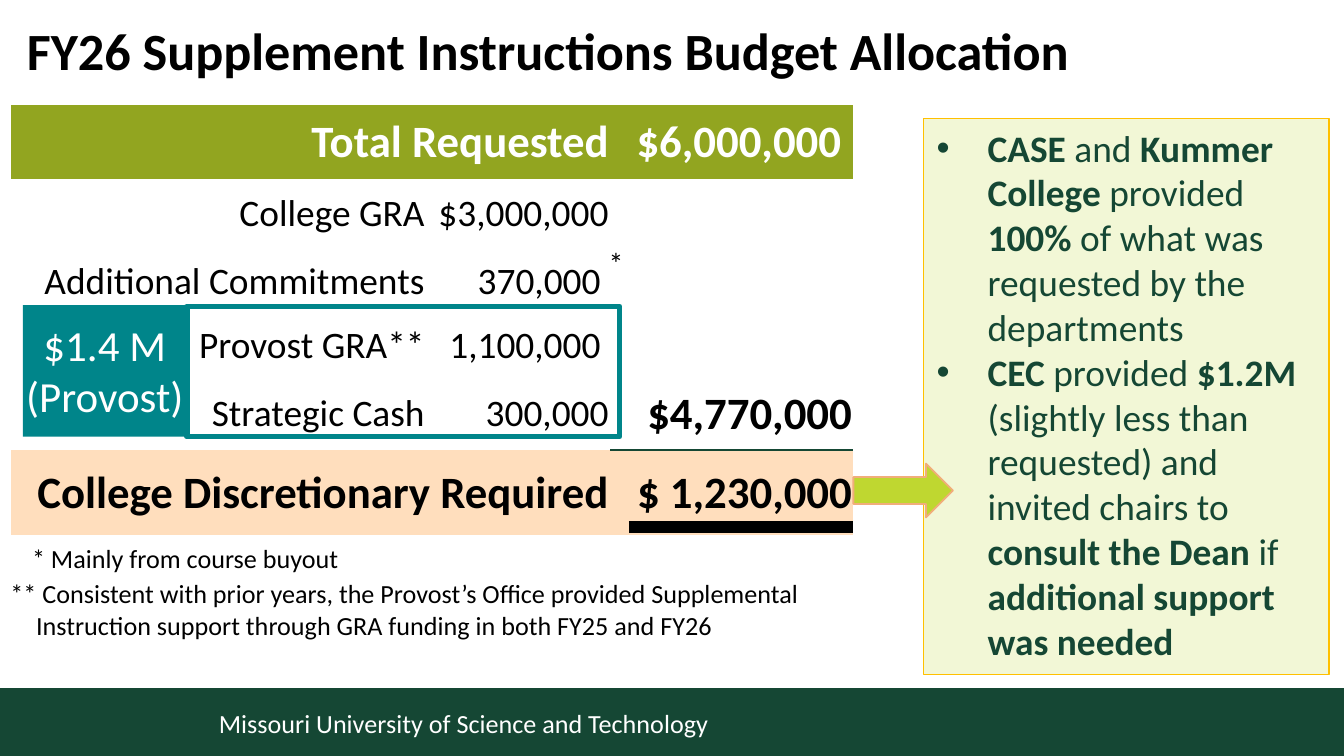
from lxml import etree
from pptx import Presentation
from pptx.dml.color import RGBColor
from pptx.enum.shapes import MSO_CONNECTOR, MSO_SHAPE
from pptx.enum.text import MSO_ANCHOR, PP_ALIGN
from pptx.oxml.ns import qn
from pptx.util import Inches, Pt

LEFT, CENTER, RIGHT = PP_ALIGN.LEFT, PP_ALIGN.CENTER, PP_ALIGN.RIGHT
TOP, MIDDLE = MSO_ANCHOR.TOP, MSO_ANCHOR.MIDDLE
RECT, ARROW = MSO_SHAPE.RECTANGLE, MSO_SHAPE.RIGHT_ARROW

BLACK = RGBColor(0x00, 0x00, 0x00)
WHITE = RGBColor(0xFF, 0xFF, 0xFF)
GREEN = RGBColor(0x15, 0x47, 0x34)
OLIVE = RGBColor(0x92, 0xA5, 0x20)
PEACH = RGBColor(0xFF, 0xDE, 0xBD)
TEAL = RGBColor(0x00, 0x85, 0x8A)
CREAM = RGBColor(0xF2, 0xF7, 0xD6)
GOLD = RGBColor(0xFF, 0xC0, 0x00)
LIME = RGBColor(0xBF, 0xD7, 0x30)
CORAL = RGBColor(0xF1, 0xAD, 0x7A)
NO_GRID = "{2D5ABB26-0587-4C30-8999-92F81FD0307C}"

prs = Presentation()
prs.slide_width, prs.slide_height = Inches(10), Inches(5.625)
U = prs.slide_width // 100
s = prs.slides.add_slide(prs.slide_layouts[6])


def add_box(x, y, w, h, kind=None, fill=None, line=None, weight=1):
    area = [round(v * U) for v in (x, y, w, h)]
    if kind is None:
        sp = s.shapes.add_textbox(*area)
    else:
        sp = s.shapes.add_shape(kind, *area)
        sp.shadow.inherit = False
        if fill is None:
            sp.fill.background()
        else:
            sp.fill.solid()
            sp.fill.fore_color.rgb = fill
        if line is None:
            sp.line.fill.background()
        else:
            sp.line.color.rgb = line
            sp.line.width = Pt(weight)
    sp.text_frame.word_wrap = True
    sp.text_frame.vertical_anchor = TOP
    return sp.text_frame


def write(tf, paras, size, color, align=LEFT):
    for i, runs in enumerate(paras):
        p = tf.add_paragraph() if i else tf.paragraphs[0]
        p.alignment = align
        for text, bold in runs:
            r = p.add_run()
            r.text = text
            r.font.name = "Calibri"
            r.font.size = Pt(size)
            r.font.bold = bold
            r.font.color.rgb = color


add_box(0, 51.2, 100, 5.05, RECT, GREEN)

tf = add_box(2, 1.9, 97.2, 5.2)
tf.margin_left = tf.margin_right = tf.margin_top = tf.margin_bottom = 0
write(tf, [[("FY26 Supplement Instructions Budget Allocation", True)]], 28, BLACK)
tf.paragraphs[0].line_spacing = 0.9

tf = add_box(15.3, 51.8, 63.5, 4)
tf.vertical_anchor = MIDDLE
write(tf, [[("Missouri University of Science and Technology", False)]], 14, WHITE)

cols = [30.9, 13.7, 18.1]
rows = [5.5, 5.1, 5, 4.6, 5.5, 6.3]
gf = s.shapes.add_table(len(rows), len(cols), round(0.8 * U), round(7.8 * U),
                        round(sum(cols) * U), round(sum(rows) * U))
tbl = gf.table
tbl.first_row = tbl.horz_banding = False
tbl._tbl.tblPr.find(qn("a:tableStyleId")).text = NO_GRID
for col, w in zip(tbl.columns, cols):
    col.width = round(w * U)
for row, h in zip(tbl.rows, rows):
    row.height = round(h * U)

budget = [
    ("Total Requested", "", "$6,000,000"),
    ("College GRA", "$3,000,000", ""),
    ("Additional Commitments", "370,000", ""),
    ("Provost GRA**", "1,100,000", ""),
    ("Strategic Cash", "300,000", "$4,770,000"),
    ("College Discretionary Required", "", "$ 1,230,000"),
]
bands = {0: OLIVE, 5: PEACH}
insets = {(0, 2): 0.9, (2, 1): 0.7, (3, 1): 0.7}
rules = {(4, 2): "a:lnB", (5, 2): "a:lnT"}
for i in bands:
    tbl.cell(i, 0).merge(tbl.cell(i, 1))
for i, texts in enumerate(budget):
    for j, text in enumerate(texts):
        cell = tbl.cell(i, j)
        cell.margin_left = cell.margin_top = round(0.1 * U)
        cell.margin_right = round(insets.get((i, j), 0.1) * U)
        cell.margin_bottom = 0
        cell.vertical_anchor = MIDDLE
        if i in bands:
            cell.fill.solid()
            cell.fill.fore_color.rgb = bands[i]
        else:
            cell.fill.background()
        if text:
            strong = i in bands or j == 2
            write(cell.text_frame, [[(text, strong)]], 24 if strong else 20,
                  WHITE if i == 0 else BLACK, RIGHT)
        if (i, j) in rules:
            ln = etree.Element(qn(rules[i, j]), w=str(Pt(1)))
            fill = etree.SubElement(ln, qn("a:solidFill"))
            etree.SubElement(fill, qn("a:srgbClr"), val=str(GREEN))
            cell._tc.get_or_add_tcPr().insert(0, ln)

add_box(13.9, 22.8, 32.2, 9.7, RECT, line=TEAL, weight=3)

tf = add_box(1.7, 22.7, 12.2, 9.8, RECT, TEAL)
tf.margin_left = tf.margin_right = 0
tf.margin_top = tf.margin_bottom = U
write(tf, [[("$1.4 M", False)], [("(Provost)", False)]], 23, WHITE, CENTER)

cx = s.shapes.add_connector(MSO_CONNECTOR.STRAIGHT, *[round(v * U) for v in (46.8, 39.2, 63.5, 39.2)])
cx.line.color.rgb = BLACK
cx.line.width = Pt(6.5)
etree.SubElement(cx._element.spPr, qn("a:effectLst"))

tf = add_box(1.4, 39.9, 25, 3.4)
tf.word_wrap = False
write(tf, [[("* Mainly from course buyout", False)]], 14, BLACK)

tf = add_box(68.7, 8.8, 30.2, 41.4, RECT, CREAM, GOLD, 0.75)
write(tf, [
    [("CASE", True), (" and ", False), ("Kummer College", True), (" provided ", False),
     ("100% ", True), ("of what was requested by the departments", False)],
    [("CEC", True), (" provided ", False), ("$1.2M ", True),
     ("(slightly less than requested) and invited chairs to ", False),
     ("consult the Dean", True), (" if ", False), ("additional support was needed", True)],
], 20, GREEN)
for p in tf.paragraphs:
    pPr = p._p.get_or_add_pPr()
    pPr.set("marL", str(round(3.8 * U)))
    pPr.set("indent", str(round(-3.8 * U)))
    etree.SubElement(pPr, qn("a:buFont"), typeface="Arial")
    etree.SubElement(pPr, qn("a:buChar"), char="•")

add_box(63.5, 34.5, 7.4, 4, ARROW, LIME, CORAL)

tf = add_box(-0.2, 42.5, 65.4, 5.7)
write(tf, [[("** Consistent with prior years, the Provost’s Office provided Supplemental "
             "Instruction support through GRA funding in both FY25 and FY26", False)]], 14, BLACK)
pPr = tf.paragraphs[0]._p.get_or_add_pPr()
pPr.set("marL", str(round(1.9 * U)))
pPr.set("indent", str(round(-1.9 * U)))

tf = add_box(44.3, 17.7, 2.5, 3.7)
write(tf, [[("*", False)]], 16, BLACK)

prs.save("out.pptx")
